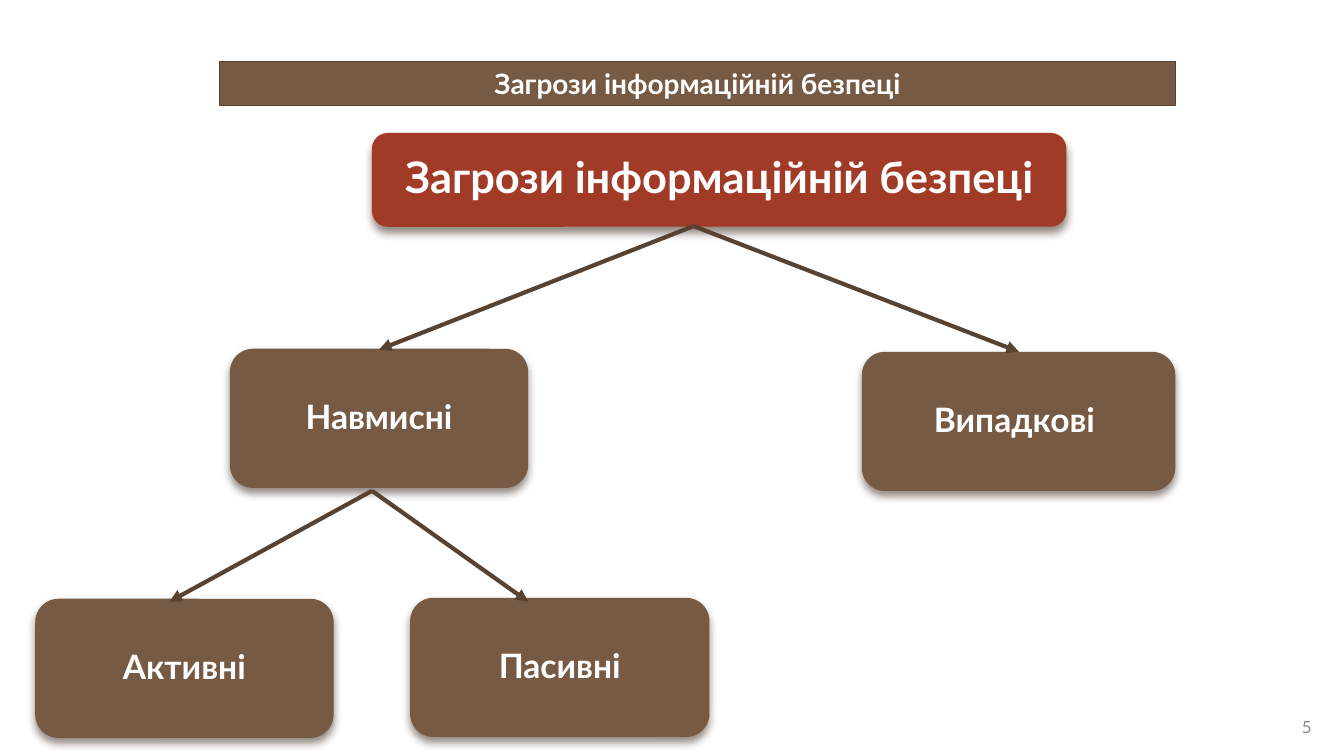
from lxml import etree
from pptx import Presentation
from pptx.dml.color import RGBColor
from pptx.enum.shapes import MSO_CONNECTOR, MSO_SHAPE
from pptx.enum.text import MSO_ANCHOR, PP_ALIGN
from pptx.oxml import parse_xml
from pptx.oxml.ns import nsdecls, qn
from pptx.util import Pt

RECT, ROUNDED = MSO_SHAPE.RECTANGLE, MSO_SHAPE.ROUNDED_RECTANGLE
STRAIGHT = MSO_CONNECTOR.STRAIGHT
MIDDLE = MSO_ANCHOR.MIDDLE
CENTER, RIGHT = PP_ALIGN.CENTER, PP_ALIGN.RIGHT

FONT = "Lato"
WHITE, BROWN, DARK_BROWN = "FFFFFF", "765A43", "584332"
RED, SHADOW, GREY = "A23A28", "4E3B30", "828F87"
HEADING = "Загрози інформаційній безпеці"

# Second and third levels of the tree: text, left, top, width
CATEGORIES = [
    ("Активні", 25.2, 427.7, 213.1),
    ("Пасивні", 293, 427, 213.8),
    ("Навмисні", 164.2, 249.1, 213.1),
    ("Випадкові ", 615.6, 251.3, 223.9),
]
CATEGORY_HEIGHT = 99.4

# Start of each branch and the points its arrows lead to
BRANCHES = [
    ((265.7, 350.6), [(121, 429.8), (377.3, 429.8)]),
    ((495.4, 161.5), [(727.9, 251.3), (270.7, 249.8)]),
]


def color(hex_code):
    return RGBColor.from_string(hex_code)


def set_text(s, text, size, hex_code, align=CENTER, bold=True):
    tf = s.text_frame
    tf.word_wrap = True
    tf.vertical_anchor = MIDDLE
    tf.text = text
    p = tf.paragraphs[0]
    p.alignment = align
    font = p.runs[0].font
    font.name, font.size, font.bold = FONT, Pt(size), bold
    font.color.rgb = color(hex_code)
    return tf


def add_box(slide, kind, left, top, width, height, fill):
    s = slide.shapes.add_shape(kind, Pt(left), Pt(top), Pt(width), Pt(height))
    s.shadow.inherit = False
    s.fill.solid()
    s.fill.fore_color.rgb = color(fill)
    s.line.fill.background()
    return s


def add_soft_shadow(s):
    effects = s._element.spPr.find(qn("a:effectLst"))
    effects.append(parse_xml(
        f'<a:outerShdw {nsdecls("a")} blurRad="{Pt(6)}" dist="{Pt(4)}" '
        f'dir="5400000" rotWithShape="0"><a:srgbClr val="{SHADOW}">'
        '<a:alpha val="60000"/></a:srgbClr></a:outerShdw>'))


def add_node(slide, text, left, top, width, height, fill, size):
    s = add_box(slide, ROUNDED, left, top, width, height, fill)
    add_soft_shadow(s)
    tf = set_text(s, text, size, WHITE)
    tf.margin_left = tf.margin_right = Pt(12)
    tf.margin_top = tf.margin_bottom = Pt(12)
    p = tf.paragraphs[0]
    p.line_spacing = 0.9
    p.space_after = Pt(round(size * 0.35))


def add_arrow(slide, start, end):
    s = slide.shapes.add_connector(
        STRAIGHT, *(Pt(value) for value in (*start, *end)))
    s.line.color.rgb = color(DARK_BROWN)
    s.line.width = Pt(3)
    etree.SubElement(s.line._get_or_add_ln(), qn("a:tailEnd"), type="triangle")
    etree.SubElement(s._element.spPr, qn("a:effectLst"))


def main():
    prs = Presentation()
    prs.slide_width, prs.slide_height = Pt(960), Pt(540)
    slide = prs.slides.add_slide(prs.slide_layouts[6])

    # Slide number
    number = slide.shapes.add_textbox(Pt(864), Pt(509.8), Pt(79.9), Pt(19.4))
    set_text(number, "5", 12, GREY, RIGHT, False)

    # Title bar
    title = add_box(slide, RECT, 157, 43.6, 682.6, 32, BROWN)
    title.line.color.rgb = color(DARK_BROWN)
    title.line.width = Pt(0.75)
    set_text(title, HEADING, 20, WHITE)

    # Tree of threats
    add_node(slide, HEADING, 265.7, 95, 496.1, 67, RED, 31)
    for text, left, top, width in CATEGORIES:
        add_node(slide, text, left, top, width, CATEGORY_HEIGHT, BROWN, 24)

    # Arrows between levels
    for start, ends in BRANCHES:
        for end in ends:
            add_arrow(slide, start, end)

    prs.save("out.pptx")


if __name__ == "__main__":
    main()
